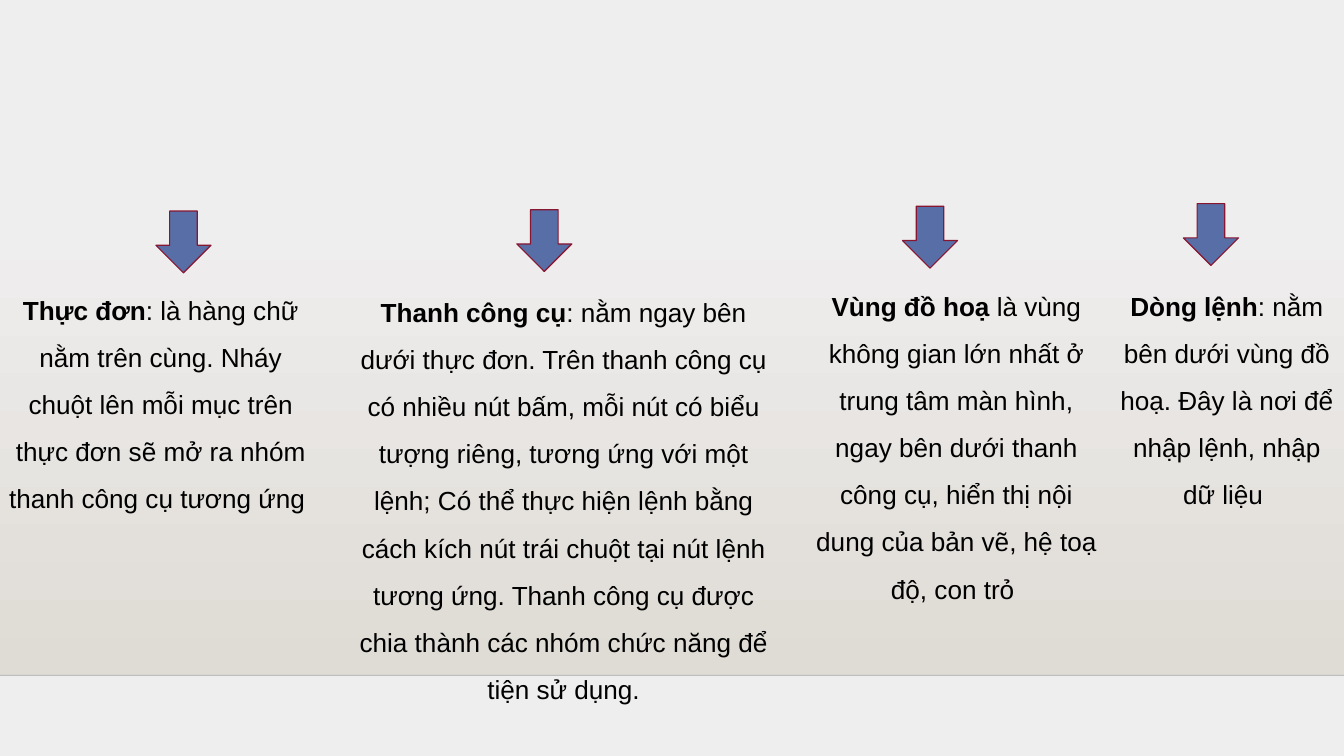
from pptx import Presentation
from pptx.dml.color import RGBColor
from pptx.enum.shapes import MSO_CONNECTOR, MSO_SHAPE
from pptx.enum.text import MSO_ANCHOR, MSO_AUTO_SIZE, PP_ALIGN
from pptx.oxml.ns import qn
from pptx.util import Inches, Pt
from lxml.etree import SubElement

BACKGROUND = RGBColor(0xEF, 0xEE, 0xEE)
FLOOR = RGBColor(0xDF, 0xDB, 0xD5)
EDGE = RGBColor(0x00, 0x00, 0x01)
ARROW_FILL = RGBColor(0x58, 0x6E, 0xA6)
ARROW_LINE = RGBColor(0x87, 0x16, 0x31)
TEXT = RGBColor(0x00, 0x00, 0x00)

SLIDE_W, SLIDE_H = 20, 11.25
FLOOR_TOP, FLOOR_BOTTOM = 3.31, 10.05
ARROW_W, ARROW_H = 0.82, 0.92

# term, explanation, text box (left, top, width, height), insets (x, y), arrow (left, top)
COLUMNS = [
    ("Thực đơn",
     ": là hàng chữ nằm trên cùng. Nháy chuột lên mỗi mục trên thực đơn sẽ mở ra "
     "nhóm thanh công cụ tương ứng ",
     (0.11, 4.14, 4.56, 3.45), (0, 0), (2.32, 3.14)),
    ("Thanh công cụ",
     ": nằm ngay bên dưới thực đơn. Trên thanh công cụ có nhiều nút bấm, mỗi nút có "
     "biểu tượng riêng, tương ứng với một lệnh; Có thể thực hiện lệnh bằng cách kích "
     "nút trái chuột tại nút lệnh tương ứng. Thanh công cụ được chia thành các nhóm "
     "chức năng để tiện sử dụng.",
     (5.26, 4.18, 6.25, 6.27), (0, 0), (7.69, 3.12)),
    ("Vùng đồ hoạ ",
     "là vùng không gian lớn nhất ở trung tâm màn hình, ngay bên dưới thanh công cụ, "
     "hiển thị nội dung của bản vẽ, hệ toạ độ, con trỏ ",
     (12.11, 4.09, 4.24, 4.86), (0, 0), (13.43, 3.07)),
    ("Dòng lệnh",
     ": nằm bên dưới vùng đồ hoạ. Đây là nơi để nhập lệnh, nhập dữ liệu ",
     (16.57, 4.04, 3.37, 3.55), (0.1, 0.05), (17.61, 3.03)),
]


class SlideBuilder:
    font_format = {"name": "Arial", "size": Pt(28)}

    def __init__(self, s):
        self.s = s

    def background(self, color):
        fill = self.s.background.fill
        fill.solid()
        fill.fore_color.rgb = color

    def gradient_band(self, top, bottom, start, end):
        sp = self.s.shapes.add_shape(MSO_SHAPE.RECTANGLE, 0, Inches(top),
                                     Inches(SLIDE_W), Inches(bottom - top))
        sp.shadow.inherit = False
        sp.line.fill.background()
        sp.fill.gradient()
        sp.fill.gradient_angle = 270
        for stop, color, position in zip(sp.fill.gradient_stops, (start, end), (0, 1)):
            stop.color.rgb = color
            stop.position = position

    def horizontal_line(self, y, color, width, opacity):
        line = self.s.shapes.add_connector(MSO_CONNECTOR.STRAIGHT, 0, Inches(y),
                                           Inches(SLIDE_W), Inches(y))
        line.line.color.rgb = color
        line.line.width = Pt(width)
        spPr = line._element.spPr
        SubElement(spPr, qn("a:effectLst"))
        rgb = next(spPr.iter(qn("a:srgbClr")))
        SubElement(rgb, qn("a:alpha")).set("val", str(opacity * 1000))

    def down_arrow(self, left, top):
        sp = self.s.shapes.add_shape(MSO_SHAPE.DOWN_ARROW, Inches(left), Inches(top),
                                     Inches(ARROW_W), Inches(ARROW_H))
        sp.shadow.inherit = False
        sp.fill.solid()
        sp.fill.fore_color.rgb = ARROW_FILL
        sp.line.color.rgb = ARROW_LINE
        sp.line.width = Pt(1.25)

    def definition(self, term, explanation, box, insets):
        tf = self.s.shapes.add_textbox(*map(Inches, box)).text_frame
        x, y = map(Inches, insets)
        frame_format = {
            "word_wrap": True, "auto_size": MSO_AUTO_SIZE.SHAPE_TO_FIT_TEXT,
            "vertical_anchor": MSO_ANCHOR.TOP,
            "margin_left": x, "margin_right": x, "margin_top": y, "margin_bottom": y,
        }
        for name, value in frame_format.items():
            setattr(tf, name, value)
        p = tf.paragraphs[0]
        p.alignment = PP_ALIGN.CENTER
        p.line_spacing = 1.5
        for text, bold in ((term, True), (explanation, False)):
            r = p.add_run()
            r.text = text
            for name, value in self.font_format.items():
                setattr(r.font, name, value)
            r.font.bold = bold
            r.font.color.rgb = TEXT


def main():
    prs = Presentation()
    prs.slide_width, prs.slide_height = Inches(SLIDE_W), Inches(SLIDE_H)
    builder = SlideBuilder(prs.slides.add_slide(prs.slide_layouts[6]))
    builder.background(BACKGROUND)
    builder.gradient_band(FLOOR_TOP, FLOOR_BOTTOM, BACKGROUND, FLOOR)
    builder.horizontal_line(FLOOR_BOTTOM, EDGE, 1, 20)
    for term, explanation, box, insets, arrow in COLUMNS:
        builder.definition(term, explanation, box, insets)
        builder.down_arrow(*arrow)
    prs.save("out.pptx")


if __name__ == "__main__":
    main()
